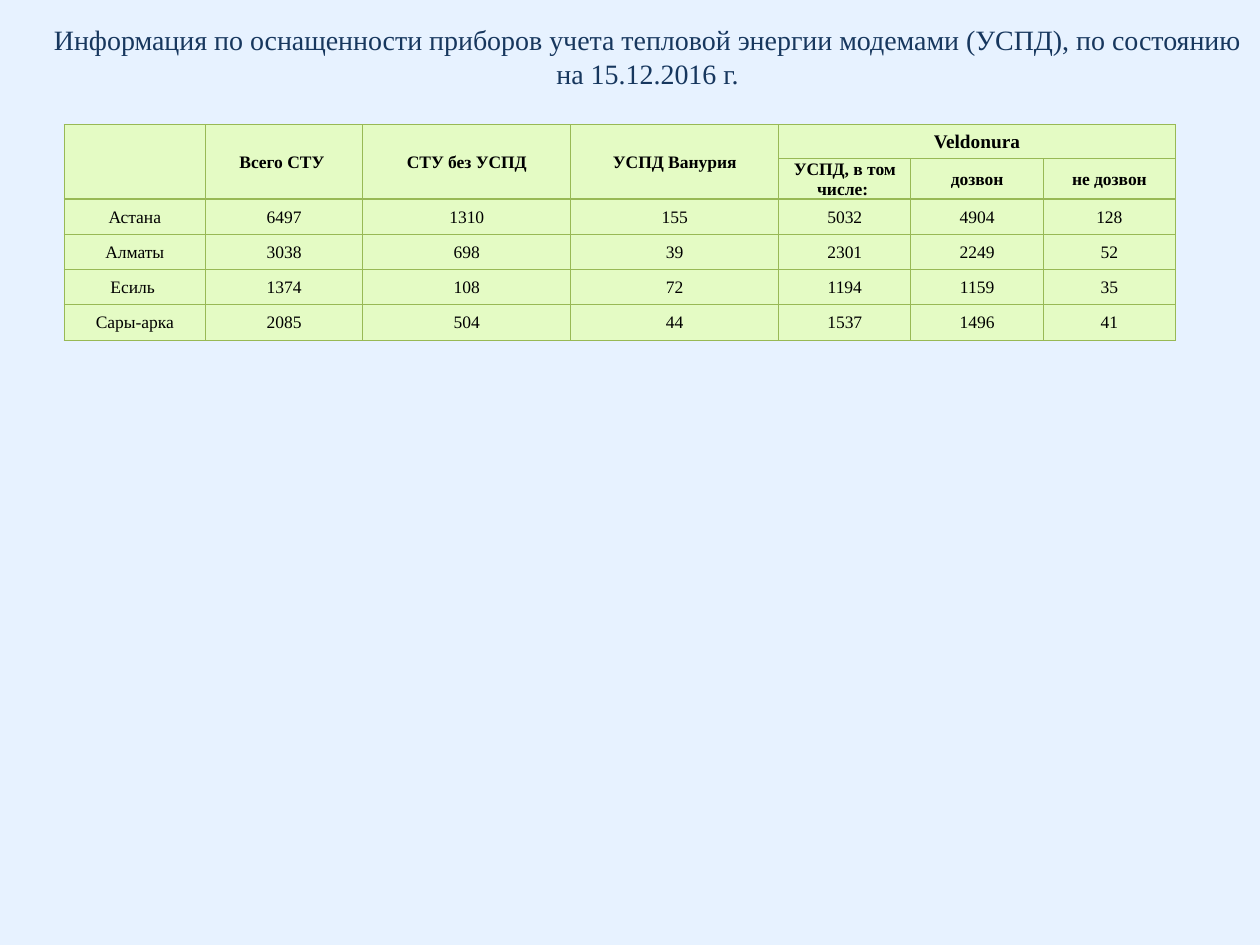
"""Builds a slide with a table of heat meters fitted with modems by district."""
from dataclasses import dataclass

from lxml.etree import SubElement
from pptx import Presentation
from pptx.dml.color import RGBColor
from pptx.enum.text import MSO_ANCHOR, PP_ALIGN
from pptx.oxml.ns import qn
from pptx.util import Inches, Pt

COLORS = {
    "background": "E7F2FF",
    "title": "17375E",
    "text": "000000",
    "cell": "E4FBC4",
    "border": "98B955",
}
FONT = "Times New Roman"
COLUMN_WIDTHS = [1.12, 1.25, 1.65, 1.65, 1.05, 1.05, 1.05]
ROW_HEIGHTS = [0.27, 0.32] + [0.28] * 4
TITLE = (
    "Информация по оснащенности приборов учета тепловой энергии "
    "модемами (УСПД), по состоянию на 15.12.2016 г."
)


@dataclass
class Heading:
    text: str
    row: int
    column: int
    rows: int = 1
    columns: int = 1
    size: int = 10


@dataclass
class District:
    name: str
    counts: tuple[int, ...]


HEADINGS = [
    Heading("", 0, 0, rows=2),
    Heading("Всего СТУ ", 0, 1, rows=2),
    Heading("СТУ без УСПД", 0, 2, rows=2),
    Heading("УСПД Ванурия", 0, 3, rows=2),
    Heading("Veldonura", 0, 4, columns=3, size=11),
    Heading("УСПД, в том числе: ", 1, 4),
    Heading("дозвон", 1, 5),
    Heading("не дозвон", 1, 6),
]
DISTRICTS = [
    District("Астана", (6497, 1310, 155, 5032, 4904, 128)),
    District("Алматы", (3038, 698, 39, 2301, 2249, 52)),
    District("Есиль ", (1374, 108, 72, 1194, 1159, 35)),
    District("Сары-арка", (2085, 504, 44, 1537, 1496, 41)),
]


def write_text(text_frame, text: str, *, size: int, color: str, bold: bool = False) -> None:
    paragraph = text_frame.paragraphs[0]
    paragraph.alignment = PP_ALIGN.CENTER
    holders = [paragraph]
    if text:
        run = paragraph.add_run()
        run.text = text
        holders.append(run)
    for holder in holders:
        holder.font.name = FONT
        holder.font.size = Pt(size)
        holder.font.bold = bold
        holder.font.color.rgb = RGBColor.from_string(COLORS[color])


def style_cell(cell) -> None:
    cell.vertical_anchor = MSO_ANCHOR.MIDDLE
    cell.margin_left = cell.margin_right = cell.margin_top = Inches(0.01)
    cell.margin_bottom = 0
    properties = cell._tc.get_or_add_tcPr()
    for side in ("a:lnL", "a:lnR", "a:lnT", "a:lnB"):
        line = SubElement(properties, qn(side), w=str(Pt(0.75)))
        fill = SubElement(line, qn("a:solidFill"))
        SubElement(fill, qn("a:srgbClr"), val=COLORS["border"])
    cell.fill.solid()
    cell.fill.fore_color.rgb = RGBColor.from_string(COLORS["cell"])


def add_district_table(slide) -> None:
    table = slide.shapes.add_table(
        len(ROW_HEIGHTS), len(COLUMN_WIDTHS), Inches(0.51), Inches(0.99),
        Inches(sum(COLUMN_WIDTHS)), Inches(sum(ROW_HEIGHTS)),
    ).table
    table.first_row = table.horz_banding = False
    for column, width in zip(table.columns, COLUMN_WIDTHS):
        column.width = Inches(width)
    for row, height in zip(table.rows, ROW_HEIGHTS):
        row.height = Inches(height)
    for cell in table.iter_cells():
        style_cell(cell)
    for heading in HEADINGS:
        cell = table.cell(heading.row, heading.column)
        if heading.rows * heading.columns > 1:
            last_row = heading.row + heading.rows - 1
            cell.merge(table.cell(last_row, heading.column + heading.columns - 1))
        write_text(cell.text_frame, heading.text, size=heading.size, color="text", bold=True)
    for row, district in enumerate(DISTRICTS, start=2):
        for column, value in enumerate((district.name, *district.counts)):
            write_text(table.cell(row, column).text_frame, str(value), size=10, color="text")
    for cell in table.iter_cells():
        if cell.is_spanned:
            write_text(cell.text_frame, "", size=10, color="text")


def add_title(slide) -> None:
    title = slide.shapes.add_textbox(Inches(0.28), Inches(0.13), Inches(9.72), Inches(0.64))
    title.text_frame.word_wrap = True
    write_text(title.text_frame, TITLE, size=16, color="title")


def main() -> None:
    presentation = Presentation()
    presentation.slide_width, presentation.slide_height = Inches(10), Inches(7.5)
    slide = presentation.slides.add_slide(presentation.slide_layouts[6])
    slide.background.fill.solid()
    slide.background.fill.fore_color.rgb = RGBColor.from_string(COLORS["background"])
    add_district_table(slide)
    add_title(slide)
    presentation.save("out.pptx")


if __name__ == "__main__":
    main()
